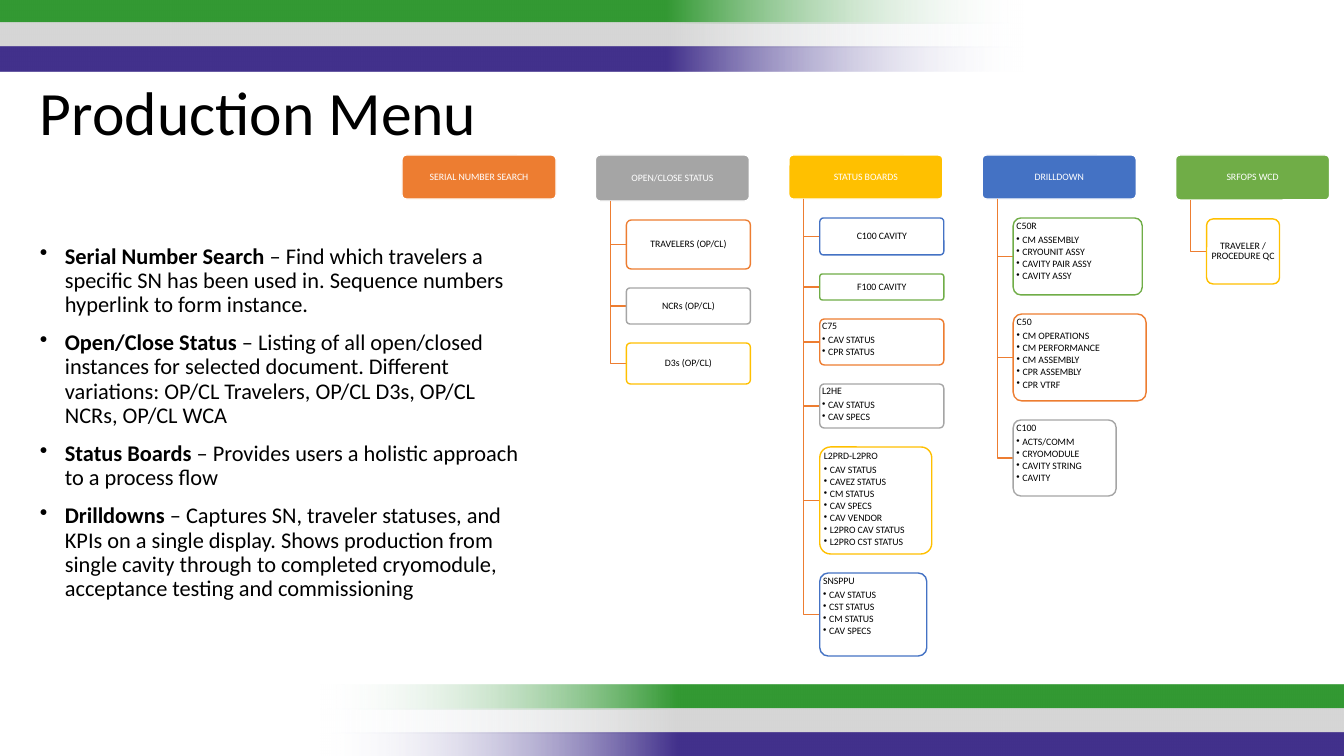
"""Build the Production Menu slide with its menu tree and descriptions."""
from dataclasses import dataclass

import pptx
import pptx.dml.color
import pptx.enum.shapes
import pptx.enum.text
import pptx.oxml
import pptx.oxml.ns
import pptx.shapes.autoshape
import pptx.slide
import pptx.text.text
import pptx.util

RGBColor = pptx.dml.color.RGBColor
Shape = pptx.shapes.autoshape.Shape
TextFrame = pptx.text.text.TextFrame
Align = pptx.enum.text.PP_ALIGN
Anchor = pptx.enum.text.MSO_ANCHOR
Preset = pptx.enum.shapes.MSO_SHAPE
qn = pptx.oxml.ns.qn

PX_PER_INCH = 100.8
FONT = "Calibri"
MENU_SIZE = 7

WHITE = RGBColor(0xFF, 0xFF, 0xFF)
BLACK = RGBColor(0x00, 0x00, 0x00)
ORANGE = RGBColor(0xED, 0x7D, 0x31)
GRAY = RGBColor(0xA5, 0xA5, 0xA5)
GOLD = RGBColor(0xFF, 0xC0, 0x00)
BLUE = RGBColor(0x44, 0x72, 0xC4)
GREEN = RGBColor(0x70, 0xAD, 0x47)
BAND_FADE = RGBColor(0xF7, 0xFA, 0xFD)
BAND_GREEN = RGBColor(0x33, 0x99, 0x33)
BAND_SILVER = RGBColor(0xD6, 0xD6, 0xD6)
BAND_PURPLE = RGBColor(0x42, 0x31, 0x8C)

BAND_COLORS = (BAND_GREEN, BAND_SILVER, BAND_PURPLE)
BAND_WIDTH, BAND_HEIGHT = 1025, 24
MENU_LEFT, MENU_TOP, MENU_PITCH = 402, 155, 193.4
HEADER_WIDTH = 154
SPINE_OFFSET, ENTRY_OFFSET, ENTRY_GAP = 15, 31, 19


@dataclass(frozen=True)
class Entry:
    """A box hanging below a menu header."""
    title: str
    width: int
    height: int
    color: RGBColor
    items: tuple[str, ...] = ()


@dataclass(frozen=True)
class Menu:
    """A menu header with its entries."""
    title: str
    height: int
    color: RGBColor
    entries: tuple[Entry, ...] = ()


@dataclass(frozen=True)
class Description:
    """A bold term with its explanation."""
    term: str
    meaning: str


MENUS = (
    Menu("SERIAL NUMBER SEARCH", 44, ORANGE),
    Menu("OPEN/CLOSE STATUS", 46, GRAY, (
        Entry("TRAVELERS (OP/CL)", 124, 49, ORANGE),
        Entry("NCRs (OP/CL)", 124, 36, GRAY),
        Entry("D3s (OP/CL)", 124, 41, GOLD),
    )),
    Menu("STATUS BOARDS", 44, GOLD, (
        Entry("C100 CAVITY", 124, 37, BLUE),
        Entry("F100 CAVITY", 124, 26, GREEN),
        Entry("C75", 124, 46, ORANGE, ("CAV STATUS", "CPR STATUS")),
        Entry("L2HE", 124, 44, GRAY, ("CAV STATUS", "CAV SPECS")),
        Entry("L2PRD-L2PRO", 112, 107, GOLD, (
            "CAV STATUS", "CAVEZ STATUS", "CM STATUS", "CAV SPECS",
            "CAV VENDOR", "L2PRO CAV STATUS", "L2PRO CST STATUS")),
        Entry("SNSPPU", 107, 83, BLUE, (
            "CAV STATUS", "CST STATUS", "CM STATUS", "CAV SPECS")),
    )),
    Menu("DRILLDOWN", 44, BLUE, (
        Entry("C50R", 129, 77, GREEN, (
            "CM ASSEMBLY", "CRYOUNIT ASSY", "CAVITY PAIR ASSY", "CAVITY ASSY")),
        Entry("C50", 133, 87, ORANGE, (
            "CM OPERATIONS", "CM PERFORMANCE", "CM ASSEMBLY",
            "CPR ASSEMBLY", "CPR VTRF")),
        Entry("C100", 103, 76, GRAY, (
            "ACTS/COMM", "CRYOMODULE", "CAVITY STRING", "CAVITY")),
    )),
    Menu("SRFOPS WCD", 45, GREEN, (
        Entry("TRAVELER / PROCEDURE QC", 73, 65, GOLD),
    )),
)

DESCRIPTIONS = (
    Description("Serial Number Search", " – Find which travelers a specific SN has been used in. "
                "Sequence numbers hyperlink to form instance."),
    Description("Open/Close Status", " – Listing of all open/closed instances for selected document. "
                "Different variations: OP/CL Travelers, OP/CL D3s, OP/CL NCRs, OP/CL WCA"),
    Description("Status Boards", " – Provides users a holistic approach to a process flow"),
    Description("Drilldowns", " – Captures SN, traveler statuses, and KPIs on a single display. "
                "Shows production from single cavity through to completed cryomodule, "
                "acceptance testing and commissioning"),
)


def px(length: float) -> pptx.util.Emu:
    """Turn px into EMU."""
    return pptx.util.Emu(round(length * 914400 / PX_PER_INCH))


def add_text(frame: TextFrame, text: str, *, size: float, color: RGBColor = BLACK,
             lead: str = "", align: Align = Align.LEFT, before: float = 0,
             after: float = 0, bullet_indent: int = 0) -> None:
    """Add a paragraph, using the empty first one when there is one."""
    is_first = not frame.text
    paragraph = frame.paragraphs[0] if is_first else frame.add_paragraph()
    paragraph.alignment = align
    paragraph.line_spacing = 0.9
    paragraph.space_before = pptx.util.Pt(0 if is_first else before)
    paragraph.space_after = pptx.util.Pt(after)
    if bullet_indent:
        properties = paragraph._p.get_or_add_pPr()
        properties.set("marL", str(px(bullet_indent)))
        properties.set("indent", str(-px(bullet_indent)))
        bullet = pptx.oxml.parse_xml(f'<a:buChar {pptx.oxml.ns.nsdecls("a")} char="•"/>')
        properties.append(bullet)
    for words, bold in ((lead, True), (text, False)):
        if words:
            run = paragraph.add_run()
            run.text = words
            run.font.name = FONT
            run.font.size = pptx.util.Pt(size)
            run.font.bold = bold
            run.font.color.rgb = color


def add_text_area(slide: pptx.slide.Slide, left: int, top: int,
                  width: int, height: int) -> TextFrame:
    """Add a wrapping text box and return its frame."""
    frame = slide.shapes.add_textbox(px(left), px(top), px(width), px(height)).text_frame
    frame.word_wrap = True
    return frame


def draw_bands(slide: pptx.slide.Slide, left: int, top: int, rotation: int) -> None:
    """Draw three stacked bands that fade out at one end."""
    for row, color in enumerate(BAND_COLORS):
        band = slide.shapes.add_shape(Preset.RECTANGLE, px(left), px(top + row * BAND_HEIGHT),
                                      px(BAND_WIDTH), px(BAND_HEIGHT))
        band.rotation = rotation
        band.shadow.inherit = False
        band.line.fill.background()
        band.fill.gradient()
        band.fill.gradient_angle = 0
        solid_stops = "".join(f'<a:gs pos="{position}000"><a:srgbClr val="{color}"/></a:gs>'
                              for position in (35, 80, 100))
        stops = pptx.oxml.parse_xml(
            f'<a:gsLst {pptx.oxml.ns.nsdecls("a")}><a:gs pos="0"><a:srgbClr val="{BAND_FADE}">'
            f'<a:alpha val="0"/></a:srgbClr></a:gs>{solid_stops}</a:gsLst>')
        gradient = band.element.spPr.find(qn("a:gradFill"))
        gradient.replace(gradient.find(qn("a:gsLst")), stops)


def draw_box(slide: pptx.slide.Slide, left: float, top: int, width: int, height: int,
             fill: RGBColor, outline: RGBColor) -> Shape:
    """Draw a rounded menu box."""
    box = slide.shapes.add_shape(Preset.ROUNDED_RECTANGLE, px(left), px(top), px(width), px(height))
    box.adjustments[0] = 0.1
    box.shadow.inherit = False
    box.fill.solid()
    box.fill.fore_color.rgb = fill
    box.line.color.rgb = outline
    box.line.width = pptx.util.Pt(1)
    frame = box.text_frame
    frame.word_wrap = True
    frame.margin_left = frame.margin_right = frame.margin_top = frame.margin_bottom = px(1)
    frame.vertical_anchor = Anchor.MIDDLE
    return box


def draw_branch(slide: pptx.slide.Slide, left: float, top: int, right: float, bottom: float) -> None:
    """Draw the elbow from a header down to an entry."""
    builder = slide.shapes.build_freeform(px(left), px(top))
    builder.add_line_segments([(px(left), px(bottom)), (px(right), px(bottom))], close=False)
    branch = builder.convert_to_shape()
    branch.shadow.inherit = False
    branch.fill.background()
    branch.line.color.rgb = ORANGE
    branch.line.width = pptx.util.Pt(1)


def draw_menu(slide: pptx.slide.Slide, menu: Menu, left: float) -> None:
    """Draw a header and its entries from top to bottom."""
    header = draw_box(slide, left, MENU_TOP, HEADER_WIDTH, menu.height, menu.color, WHITE)
    add_text(header.text_frame, menu.title, size=MENU_SIZE, color=WHITE, align=Align.CENTER)
    header_bottom = MENU_TOP + menu.height
    top = header_bottom + ENTRY_GAP
    for entry in menu.entries:
        entry_left = left + ENTRY_OFFSET
        draw_branch(slide, left + SPINE_OFFSET, header_bottom, entry_left, top + entry.height / 2)
        box = draw_box(slide, entry_left, top, entry.width, entry.height, WHITE, entry.color)
        if entry.items:
            box.text_frame.vertical_anchor = Anchor.TOP
        add_text(box.text_frame, entry.title, size=MENU_SIZE, after=2.45 if entry.items else 0,
                 align=Align.LEFT if entry.items else Align.CENTER)
        for item in entry.items:
            add_text(box.text_frame, item, size=MENU_SIZE, after=1.05, bullet_indent=6)
        top += entry.height + ENTRY_GAP


def main() -> None:
    """Build and save the slide."""
    deck = pptx.Presentation()
    deck.slide_width, deck.slide_height = px(1344), px(756)
    slide = deck.slides.add_slide(deck.slide_layouts[6])
    draw_bands(slide, -1, -1, 180)
    draw_bands(slide, 320, 685, 0)
    add_text(add_text_area(slide, 30, 77, 1159, 100), "Production Menu", size=44)
    for column, menu in enumerate(MENUS):
        draw_menu(slide, menu, MENU_LEFT + column * MENU_PITCH)
    descriptions = add_text_area(slide, 30, 240, 506, 440)
    for description in DESCRIPTIONS:
        add_text(descriptions, description.meaning, lead=description.term, size=16,
                 before=10, bullet_indent=25)
    deck.save("out.pptx")


if __name__ == "__main__":
    main()
